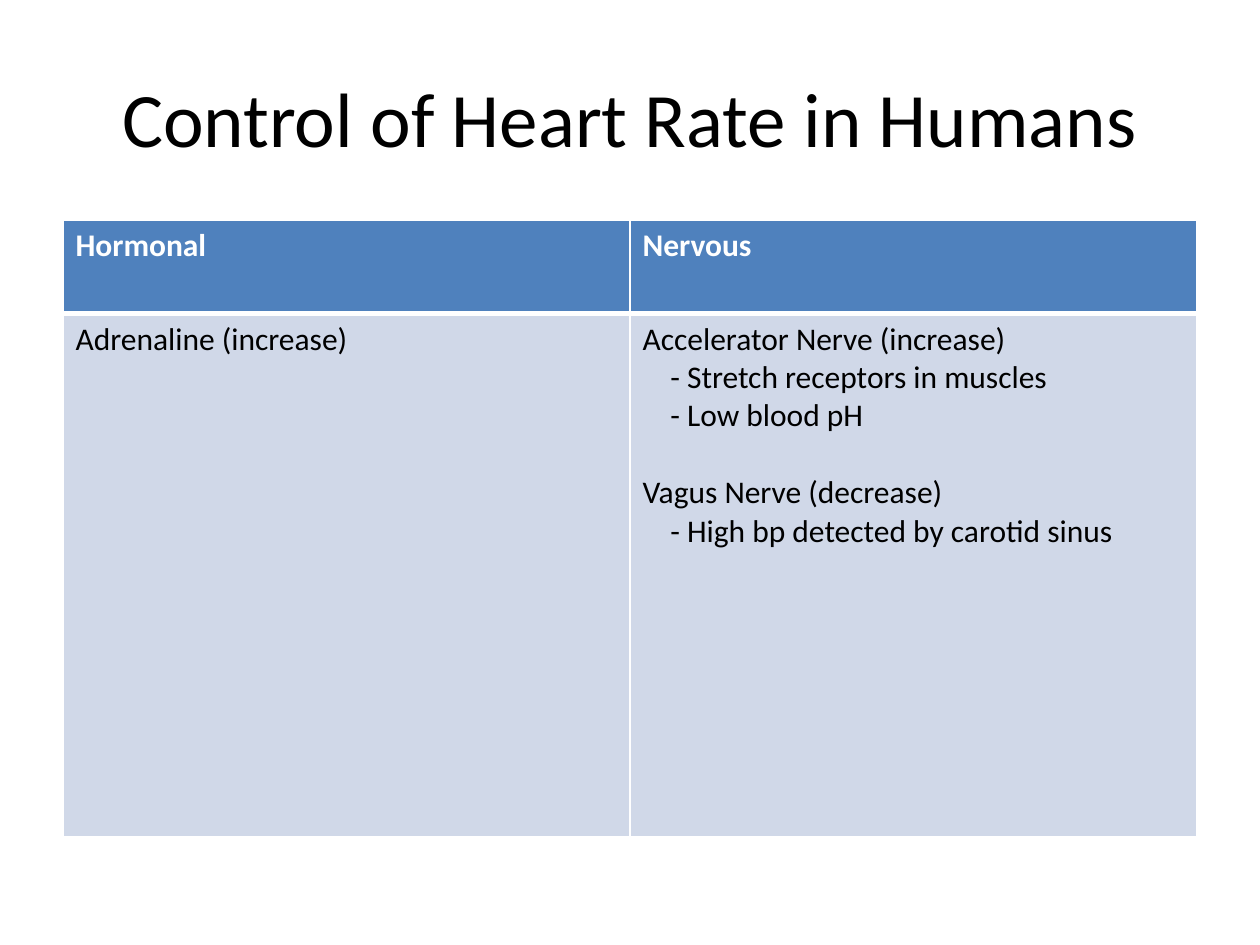
from lxml import etree
from pptx import Presentation
from pptx.dml.color import RGBColor
from pptx.enum.text import MSO_ANCHOR, PP_ALIGN
from pptx.oxml.ns import qn
from pptx.util import Inches, Pt

MIDDLE = MSO_ANCHOR.MIDDLE
CENTER = PP_ALIGN.CENTER
BLANK_LAYOUT = 6

HEADINGS = ["Hormonal", "Nervous"]
HORMONAL = [("Adrenaline (increase)", 0, 0)]
NERVOUS = [
    ("Accelerator Nerve (increase)", 0, 0),
    ("- Stretch receptors in muscles", 1, 0),
    ("- Low blood pH", 1, 0),
    ("Vagus Nerve (decrease)", 0, 22),
    ("- High bp detected by carotid sinus", 1, 0),
]


def color(hex_code):
    return RGBColor.from_string(hex_code)


class SlideBuilder:
    """Holds the style and the current slide, and adds its elements."""

    font = "Calibri"
    black = "000000"
    white = "FFFFFF"
    header_fill = "4F81BD"
    body_fill = "D0D8E8"
    indent = Inches(0.22)

    def __init__(self, slide):
        self.slide = slide

    def style_runs(self, paragraph, size, hex_code, bold=False):
        for run in paragraph.runs:
            run.font.name = self.font
            run.font.size = Pt(size)
            run.font.bold = bold
            run.font.color.rgb = color(hex_code)

    def title(self, text, left, top, width, height):
        box = self.slide.shapes.add_textbox(
            Inches(left), Inches(top), Inches(width), Inches(height))
        frame = box.text_frame
        frame.word_wrap = True
        frame.vertical_anchor = MIDDLE
        frame.text = text
        heading = frame.paragraphs[0]
        heading.alignment = CENTER
        self.style_runs(heading, 44, self.black)

    def borders(self, cell, top, bottom):
        properties = cell._tc.get_or_add_tcPr()
        for side, points in (("L", 1), ("R", 1), ("T", top), ("B", bottom)):
            line = etree.SubElement(properties, qn(f"a:ln{side}"), w=str(Pt(points)))
            fill = etree.SubElement(line, qn("a:solidFill"))
            etree.SubElement(fill, qn("a:srgbClr"), val=self.white)

    def cell(self, cell, lines, is_header):
        self.borders(cell, 1 if is_header else 3, 3 if is_header else 1)
        cell.fill.solid()
        cell.fill.fore_color.rgb = color(self.header_fill if is_header else self.body_fill)
        cell.text_frame.text = "\n".join(text for text, _, _ in lines)
        text_color = self.white if is_header else self.black
        for paragraph, (_, level, gap) in zip(cell.text_frame.paragraphs, lines):
            if level:
                paragraph._p.get_or_add_pPr().set("marL", str(level * self.indent))
            if gap:
                paragraph.space_before = Pt(gap)
            self.style_runs(paragraph, 18, text_color, is_header)

    def table(self, rows, left, top, width, heights):
        columns = len(rows[0])
        table = self.slide.shapes.add_table(
            len(rows), columns, Inches(left), Inches(top),
            Inches(width), Inches(sum(heights))).table
        for column in table.columns:
            column.width = Inches(width / columns)
        for row_index, (contents, height) in enumerate(zip(rows, heights)):
            table.rows[row_index].height = Inches(height)
            for column_index, lines in enumerate(contents):
                self.cell(table.cell(row_index, column_index), lines, row_index == 0)


def main():
    presentation = Presentation()
    presentation.slide_width = Inches(10)
    presentation.slide_height = Inches(7.5)
    slide = presentation.slides.add_slide(presentation.slide_layouts[BLANK_LAYOUT])
    builder = SlideBuilder(slide)
    builder.title("Control of Heart Rate in Humans", 0.5, 0.3, 9, 1.25)
    header = [[(heading, 0, 0)] for heading in HEADINGS]
    builder.table([header, [HORMONAL, NERVOUS]], 0.5, 1.75, 9, [0.74, 4.15])
    presentation.save("out.pptx")


if __name__ == "__main__":
    main()
